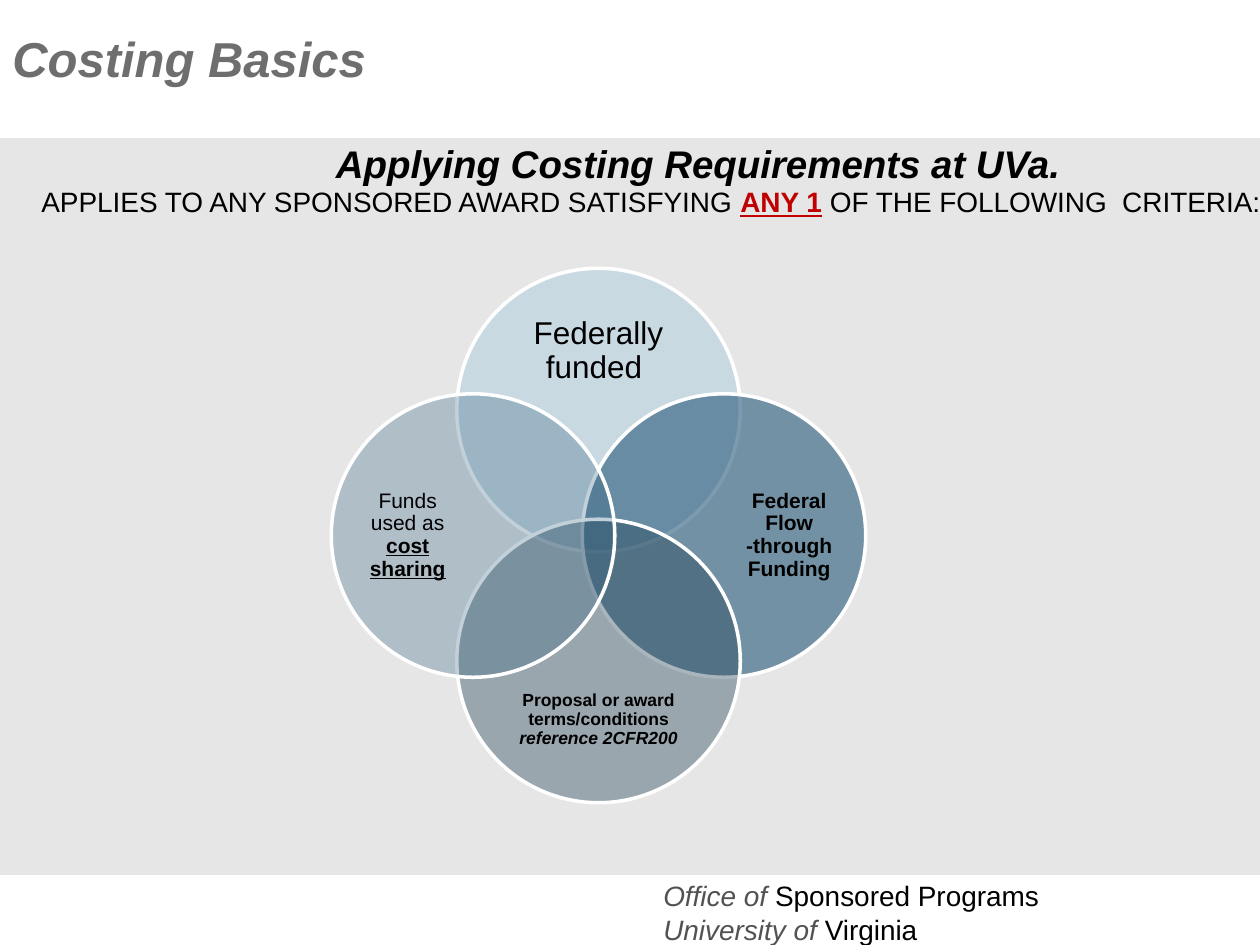
"""Build the Costing Basics slide with its four-circle criteria diagram."""
from lxml import etree
from pptx import Presentation
from pptx.dml.color import RGBColor
from pptx.enum.shapes import MSO_SHAPE
from pptx.enum.text import MSO_ANCHOR, MSO_AUTO_SIZE, PP_ALIGN
from pptx.oxml.ns import qn
from pptx.util import Pt

RECTANGLE, OVAL = MSO_SHAPE.RECTANGLE, MSO_SHAPE.OVAL
LEFT, CENTER = PP_ALIGN.LEFT, PP_ALIGN.CENTER
TOP, MIDDLE = MSO_ANCHOR.TOP, MSO_ANCHOR.MIDDLE
FIT_SHAPE = MSO_AUTO_SIZE.SHAPE_TO_FIT_TEXT

BLACK = RGBColor(0x00, 0x00, 0x00)
WHITE = RGBColor(0xFF, 0xFF, 0xFF)
PANEL_GRAY = RGBColor(0xE6, 0xE6, 0xE6)
TITLE_GRAY = RGBColor(0x6E, 0x6E, 0x6E)
FOOTER_GRAY = RGBColor(0x52, 0x52, 0x52)
RED = RGBColor(0xC0, 0x00, 0x00)
PALE_BLUE = RGBColor(0xAD, 0xCD, 0xE0)
BLUE = RGBColor(0x2E, 0x5E, 0x7D)
NAVY = RGBColor(0x1F, 0x3F, 0x53)


def add_text(box, lines, size, align=LEFT, anchor=TOP, insets=(7.2, 3.6), spacing=None):
    """Write lines of (text, style, color) runs into a new text box."""
    frame = slide.shapes.add_textbox(*[Pt(length) for length in box]).text_frame
    frame.word_wrap = True
    frame.vertical_anchor = anchor
    frame.margin_left = frame.margin_right = Pt(insets[0])
    frame.margin_top = frame.margin_bottom = Pt(insets[1])
    for index, line in enumerate(lines):
        paragraph = frame.add_paragraph() if index else frame.paragraphs[0]
        paragraph.alignment = align
        paragraph.line_spacing = spacing
        for text, style, color in line:
            run = paragraph.add_run()
            run.text = text
            run.font.name = "Arial"
            run.font.size = Pt(size)
            run.font.bold = "b" in style
            run.font.italic = "i" in style
            run.font.underline = "u" in style
            run.font.color.rgb = color
    return frame


prs = Presentation()
prs.slide_width, prs.slide_height = Pt(720), Pt(540)
slide = prs.slides.add_slide(prs.slide_layouts[6])

panel = slide.shapes.add_shape(RECTANGLE, Pt(0), Pt(79), Pt(720), Pt(421))
panel.shadow.inherit = False
panel.fill.solid()
panel.fill.fore_color.rgb = PANEL_GRAY
panel.line.fill.background()

footer = add_text(
    (372, 498.5, 288, 46),
    [
        [("Office of ", "i", FOOTER_GRAY), ("Sponsored Programs", "", BLACK)],
        [("University of ", "i", FOOTER_GRAY), ("Virginia", "", BLACK)],
    ],
    16,
)
footer.auto_size = FIT_SHAPE
add_text((78, 66, 642, 54), [[("Applying Costing Requirements at UVa.", "bi", BLACK)]],
         22, CENTER, MIDDLE, (0, 3.6))
add_text(
    (18, 102, 708, 54),
    [[("APPLIES TO ANY SPONSORED AWARD SATISFYING ", "", BLACK),
      ("ANY 1", "bu", RED),
      (" OF THE FOLLOWING  CRITERIA:", "", BLACK)]],
    16, CENTER, TOP, (0, 3.6),
)
heading = add_text((0, 12.5, 672, 41), [[("Costing Basics", "bi", TITLE_GRAY)]], 28)
heading.auto_size = FIT_SHAPE

CENTER_X, CENTER_Y = 342, 306
DIAMETER, CIRCLE_OFFSET = 162, 71.7
LABEL_LONG, LABEL_WIDTH, LABEL_HEIGHT = 124.6, 62.6, 51
LABEL_OFFSET_X, LABEL_OFFSET_Y = 109, 105.5

criteria = [
    (0, -1, PALE_BLUE, 50, 18, [("Federally funded ", "", BLACK)]),
    (1, 0, BLUE, 62, 12, [("Federal Flow -through Funding", "b", BLACK)]),
    (0, 1, NAVY, 38, 10, [("Proposal or award terms/conditions ", "b", BLACK),
                          ("reference 2CFR200", "bi", BLACK)]),
    (-1, 0, BLUE, 29, 12, [("Funds used as ", "", BLACK), ("cost sharing", "bu", BLACK)]),
]
for dx, dy, color, opacity, size, label in criteria:
    circle = slide.shapes.add_shape(
        OVAL,
        Pt(CENTER_X + dx * CIRCLE_OFFSET - DIAMETER / 2),
        Pt(CENTER_Y + dy * CIRCLE_OFFSET - DIAMETER / 2),
        Pt(DIAMETER), Pt(DIAMETER),
    )
    circle.shadow.inherit = False
    circle.fill.solid()
    circle.fill.fore_color.rgb = color
    fill_color = circle.fill._xPr.find(qn("a:solidFill"))[0]
    etree.SubElement(fill_color, qn("a:alpha"), val=str(opacity * 1000))
    circle.line.color.rgb = WHITE
    circle.line.width = Pt(2)

    width, height = (LABEL_WIDTH, LABEL_LONG) if dx else (LABEL_LONG, LABEL_HEIGHT)
    left = CENTER_X + dx * LABEL_OFFSET_X - width / 2
    top = CENTER_Y + dy * LABEL_OFFSET_Y - height / 2
    add_text((left, top, width, height), [label], size, CENTER, MIDDLE, (0, 0), 0.9)

prs.save("out.pptx")
